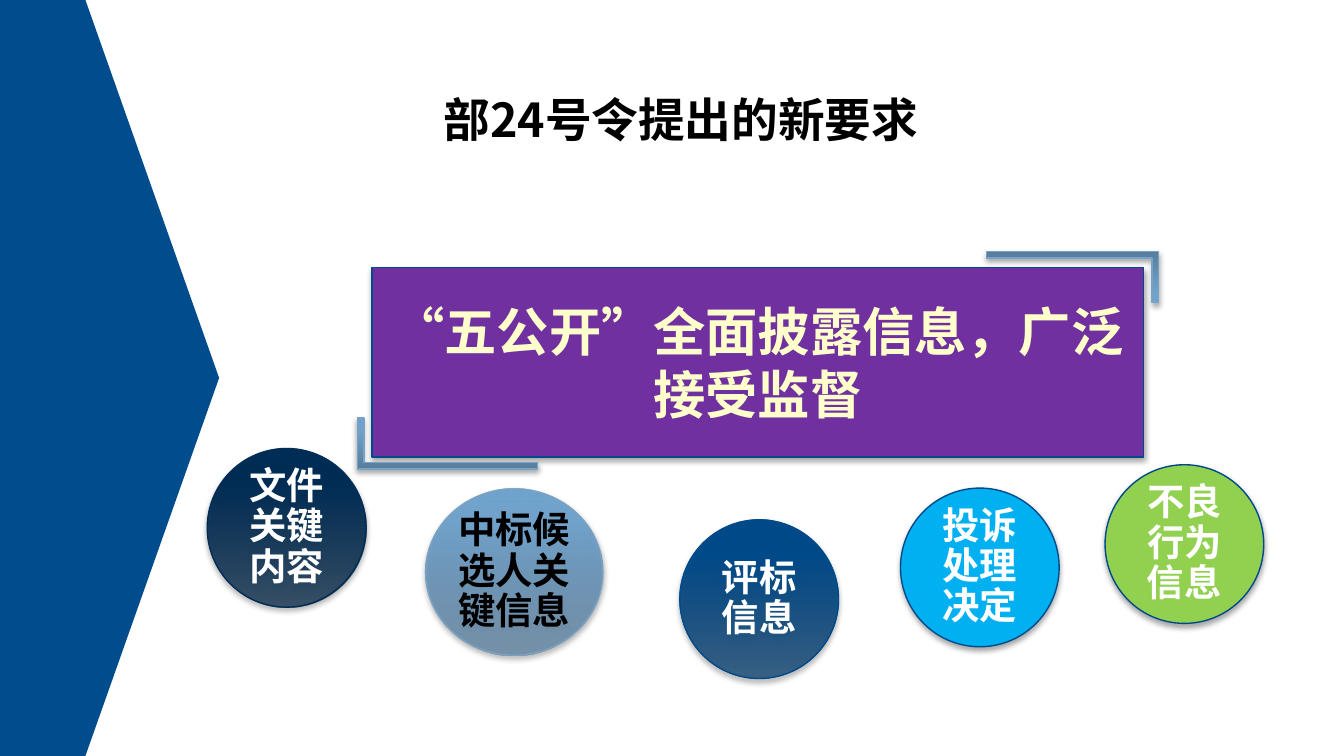
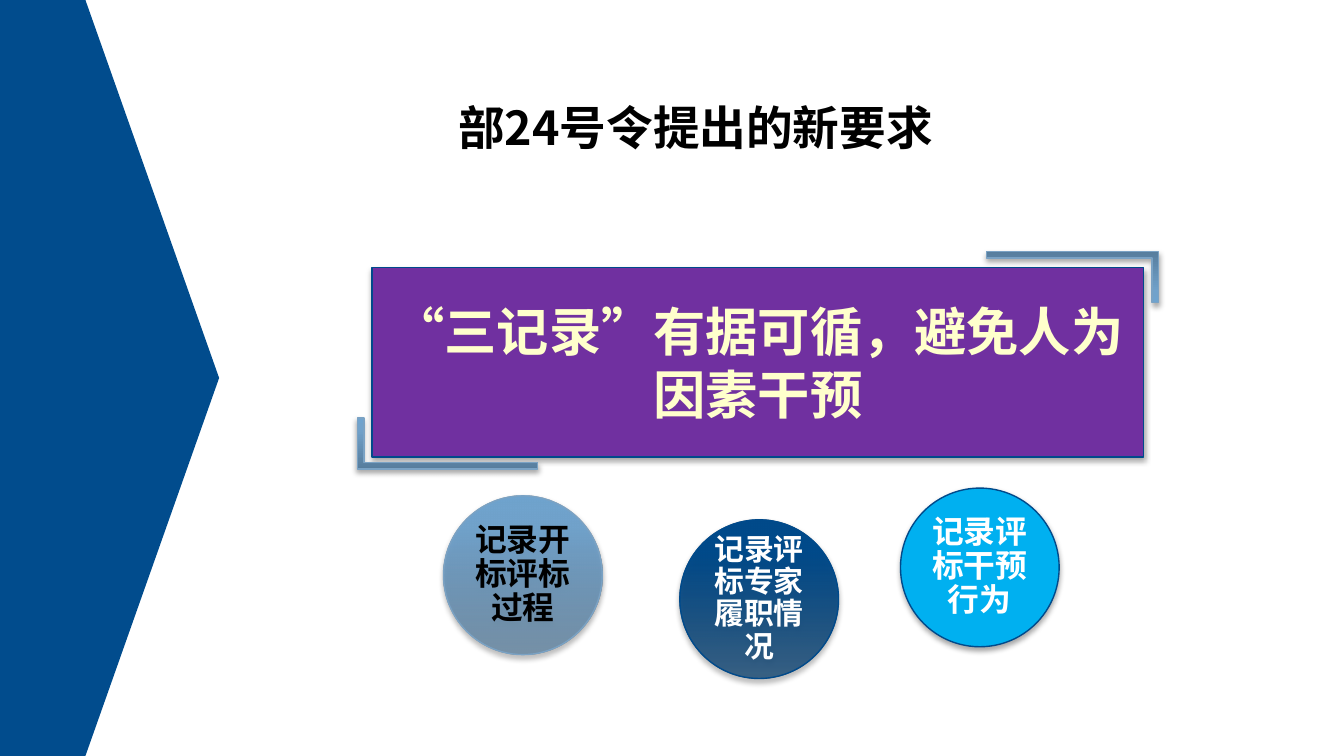
from dataclasses import dataclass
from typing import NamedTuple, Optional

from lxml.etree import SubElement as Sub
from pptx import Presentation
from pptx.dml.color import RGBColor as Color
from pptx.enum.shapes import MSO_SHAPE as Form
from pptx.enum.text import MSO_ANCHOR as Anchor, PP_ALIGN as Align
from pptx.oxml.ns import qn
from pptx.shapes.autoshape import Shape
from pptx.slide import Slide
from pptx.util import Pt

# Shared look
FONT = "Noto Sans CJK SC"
TITLE = "部24号令提出的新要求"
WHITE = Color(0xFF, 0xFF, 0xFF)
BLACK = Color(0x00, 0x00, 0x00)
CREAM = Color(0xFF, 0xFF, 0xCC)
BAND = Color(0x01, 0x4C, 0x8D)
PURPLE = Color(0x70, 0x30, 0xA0)
BLUE = Color(0x00, 0x4A, 0x8B)
NAVY = Color(0x00, 0x2D, 0x56)
STEEL = Color(0x7A, 0xA2, 0xC4)
CYAN = Color(0x00, 0xB0, 0xF0)
GREEN = Color(0x92, 0xD0, 0x50)
NAVY_RAMP = (Color(0x00, 0x22, 0x42), Color(0x00, 0x2D, 0x55), NAVY)
STEEL_RAMP = (Color(0x57, 0x7D, 0x9D), Color(0x71, 0xA2, 0xCB),
              Color(0x6F, 0xA3, 0xCE))
BLUE_RAMP = (Color(0x00, 0x39, 0x6A), Color(0x00, 0x4A, 0x8A),
             Color(0x00, 0x4A, 0x8A))
STOPS = (0, 80, 100)


class Skin(NamedTuple):
    line: Color
    fill: Optional[Color] = None
    ramp: tuple[Color, ...] = ()
    base: int = 100  # opacity of the first stop, in percent
    ink: Color = WHITE


class Box(NamedTuple):
    x: float
    y: float
    w: float
    h: float

    def place(self) -> tuple[Pt, ...]:
        return tuple(Pt(v) for v in self)


@dataclass(frozen=True)
class Disc:
    text: str
    x: float
    y: float
    skin: Skin
    size: float = 20
    w: float = 85
    h: float = 85


@dataclass(frozen=True)
class Page:
    title: Box
    claim: str
    discs: tuple[Disc, ...]


SIGN = Skin(BLUE, PURPLE, ink=CREAM)
HOOK = Skin(STEEL, ramp=STEEL_RAMP)
DARK = Skin(NAVY, ramp=NAVY_RAMP, base=70)
PALE = Skin(STEEL, ramp=STEEL_RAMP, base=70, ink=BLACK)
DEEP = Skin(BLUE, ramp=BLUE_RAMP, base=70)
SKY = Skin(BLUE, CYAN)
LEAF = Skin(BLUE, GREEN)

BANNER = Box(199.4, 143.3, 413.3, 101.5)
HOOKS = ((Box(191.5, 223.9, 96.5, 27.4), 0),
         (Box(528.5, 134.6, 92.2, 27.4), 180))
THICK = 3.6

PAGES = (
    Page(Box(58.3, 36.7, 612.7, 51.1), "“五公开”全面披露信息，广泛接受监督", (
        Disc("文件关键内容", 111, 240.3, DARK),
        Disc("中标候选人关键信息", 228, 262, PALE, w=95, h=89),
        Disc("评标信息", 364.2, 278.5, DEEP),
        Disc("投诉处理决定", 482.4, 261.5, SKY),
        Disc("不良行为信息", 592, 249, LEAF),
    )),
    Page(Box(66.2, 41, 612.7, 51.1), "“三记录”有据可循，避免人为因素干预", (
        Disc("记录开标评标过程", 237.6, 265.7, PALE, 17),
        Disc("记录评标专家履职情况", 364.2, 278.5, DEEP, 16),
        Disc("记录评标干预行为", 482.4, 261.5, SKY, 17),
    )),
)


def blend(shape: Shape, skin: Skin) -> None:
    """Fill with the skin's ramp, rising from the bottom."""
    shape.fill.solid()
    props = shape._element.spPr
    solid = props.find(qn("a:solidFill"))
    grad = Sub(props, qn("a:gradFill"), rotWithShape="1")
    props.replace(solid, grad)
    stops = Sub(grad, qn("a:gsLst"))
    for spot, tone in zip(STOPS, skin.ramp):
        stop = Sub(stops, qn("a:gs"), pos=str(spot * 1000))
        node = Sub(stop, qn("a:srgbClr"), val=str(tone))
        if spot == 0 and skin.base < 100:
            Sub(node, qn("a:alpha"), val=str(skin.base * 1000))
    Sub(grad, qn("a:lin"), ang="16200000", scaled="0")


def paint(shape: Shape, skin: Skin) -> None:
    """Set fill, outline and soft shadow."""
    if skin.ramp:
        blend(shape, skin)
    else:
        shape.fill.solid()
        shape.fill.fore_color.rgb = skin.fill
    shape.line.color.rgb = skin.line
    shape.line.width = Pt(0.75)
    shape.shadow.inherit = False
    glow = Sub(shape._element.spPr.find(qn("a:effectLst")),
               qn("a:outerShdw"), blurRad=str(Pt(3.1)), dist=str(Pt(1.8)),
               dir="5400000", rotWithShape="0")
    node = Sub(glow, qn("a:srgbClr"), val=str(BLACK))
    Sub(node, qn("a:alpha"), val="35000")


def write(shape: Shape, text: str, size: float, ink: Color,
          pad: tuple[float, float], lead: float = 1, above: float = 0,
          below: float = 0, hold: Anchor = Anchor.MIDDLE) -> None:
    """Put one bold, centred paragraph in a shape."""
    frame = shape.text_frame
    frame.text = text
    frame.word_wrap = True
    frame.vertical_anchor = hold
    frame.margin_left = frame.margin_right = Pt(pad[0])
    frame.margin_top = frame.margin_bottom = Pt(pad[1])
    para = frame.paragraphs[0]
    para.alignment = Align.CENTER
    para.line_spacing = lead
    para.space_before, para.space_after = Pt(above), Pt(below)
    for run in para.runs:
        font = run.font
        font.size, font.bold, font.name = Pt(size), True, FONT
        font.color.rgb = ink
        Sub(run._r.get_or_add_rPr(), qn("a:ea"), typeface=FONT)


def add_band(slide: Slide) -> None:
    band = slide.shapes.add_shape(
        Form.PENTAGON, *Box(0, 0, 117.4, 405).place())
    band.adjustments[0] = 0.61
    band.fill.solid()
    band.fill.fore_color.rgb = BAND
    band.line.fill.background()
    band.shadow.inherit = False


def add_hook(slide: Slide, box: Box, turn: int) -> None:
    """Draw an L-shaped corner, turned where needed."""
    x, y, w, h = box
    low = h - THICK
    dots = [(0, 0), (0, h), (w, h), (w, low), (THICK, low), (THICK, 0)]
    spots = [(Pt(x + dx), Pt(y + dy)) for dx, dy in dots]
    pen = slide.shapes.build_freeform(*spots[0])
    pen.add_line_segments(spots[1:], close=True)
    hook = pen.convert_to_shape()
    hook.rotation = turn
    paint(hook, HOOK)


def add_disc(slide: Slide, disc: Disc) -> None:
    box = Box(disc.x, disc.y, disc.w, disc.h)
    shape = slide.shapes.add_shape(Form.OVAL, *box.place())
    paint(shape, disc.skin)
    write(shape, disc.text, disc.size, disc.skin.ink, (2.5, 2.5),
          lead=0.9, below=disc.size * 0.35)


def add_page(deck: Presentation, page: Page) -> None:
    slide = deck.slides.add_slide(deck.slide_layouts[6])
    add_band(slide)
    # Banner and its corners
    sign = slide.shapes.add_shape(Form.RECTANGLE, *BANNER.place())
    paint(sign, SIGN)
    write(sign, page.claim, 28, SIGN.ink, (5.7, 2.8))
    for box, turn in HOOKS:
        add_hook(slide, box, turn)
    # Discs, then title
    for disc in page.discs:
        add_disc(slide, disc)
    title = slide.shapes.add_textbox(*page.title.place())
    write(title, TITLE, 25, BLACK, (5.7, 2.8), lead=1.3, above=4.7,
          hold=Anchor.TOP)


def main() -> None:
    deck = Presentation()
    deck.slide_width, deck.slide_height = Pt(720), Pt(405)
    for page in PAGES:
        add_page(deck, page)
    deck.save("out.pptx")


if __name__ == "__main__":
    main()
